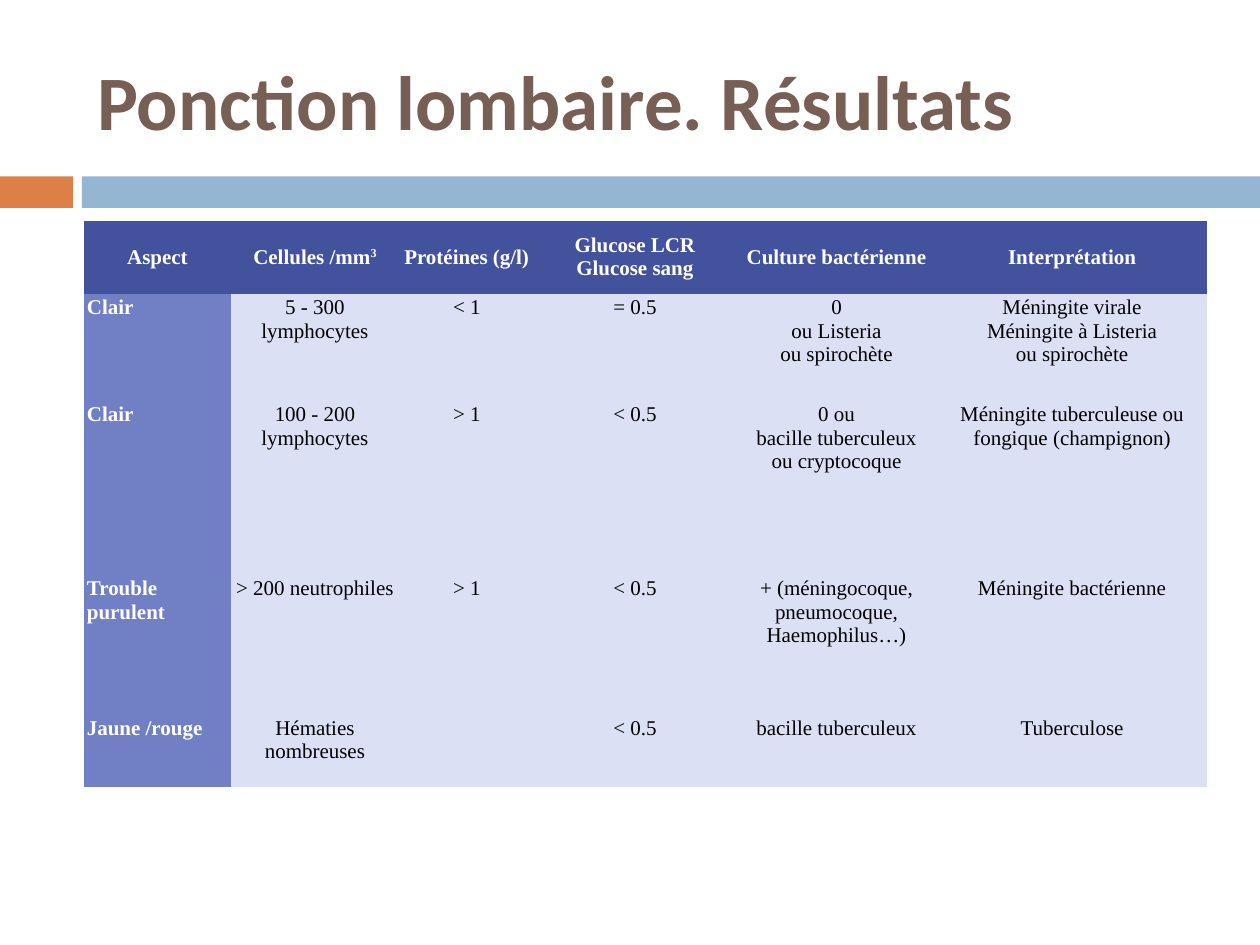
from pptx import Presentation
from pptx.dml.color import RGBColor as Rgb
from pptx.enum.shapes import MSO_SHAPE as Kind
from pptx.enum.text import MSO_ANCHOR as Anchor, PP_ALIGN as Align
from pptx.util import Inches, Pt

TITLE = "Ponction lombaire. Résultats"
HEAD = ["Aspect", "Cellules /mm^3", "Protéines (g/l)", "Glucose LCR\nGlucose sang",
        "Culture bactérienne", "Interprétation"]
ROWS = [
    ["Clair", "5 - 300 lymphocytes", "< 1", "= 0.5", "0\nou Listeria\nou spirochète",
     "Méningite virale\nMéningite à Listeria\nou spirochète"],
    ["Clair", "100 - 200 lymphocytes", "> 1", "< 0.5",
     "0 ou\nbacille tuberculeux\nou cryptocoque",
     "Méningite tuberculeuse ou fongique (champignon)"],
    ["Trouble purulent", "> 200 neutrophiles", "> 1", "< 0.5",
     "+ (méningocoque, pneumocoque, Haemophilus…)", "Méningite bactérienne"],
    ["Jaune /rouge", "Hématies nombreuses", "", "< 0.5", "bacille tuberculeux", "Tuberculose"],
]
WIDTHS = [1.16, 1.34, 1.07, 1.6, 1.6, 2.14]
HEIGHTS = [0.58, 0.85, 1.38, 1.11, 0.58]
HUES = {"orange": "DD8047", "blue": "94B6D2", "title": "775F55", "head": "42529D",
        "side": "7180C4", "body": "DBE0F5", "white": "FFFFFF", "black": "000000"}
BARS = [(0, 0.58, "orange"), (0.65, 9.35, "blue")]
LEFT, WIDE = 0.67, 8.92
PAD = 0.02
PLAIN = "{2D5ABB26-0587-4C30-8999-92F81FD0307C}"


def hue(name):
    """Return the named colour."""
    return Rgb.from_string(HUES[name])


def style(item, **values):
    """Set each given attribute on the item."""
    for key, value in values.items():
        setattr(item, key, value)


def paint(shape, name):
    """Give the shape a solid fill."""
    shape.fill.solid()
    shape.fill.fore_color.rgb = hue(name)


def ink(run, face, size, bold, name):
    """Format the font of a run."""
    style(run.font, name=face, size=Pt(size), bold=bold)
    run.font.color.rgb = hue(name)


def write(cell, text, bold, name, align):
    """Fill a cell with lines, raising what follows a caret."""
    frame = cell.text_frame
    for num, line in enumerate(text.split("\n")):
        para = frame.add_paragraph() if num else frame.paragraphs[0]
        para.alignment = align
        for part, piece in enumerate(line.split("^")):
            run = para.add_run()
            run.text = piece
            ink(run, "Times New Roman", 12, bold, name)
            if part:
                run.font._element.set("baseline", "30000")


def add_grid(slide):
    """Add the table of results."""
    data = [HEAD] + ROWS
    frame = slide.shapes.add_table(len(data), len(HEAD), Inches(LEFT), Inches(1.75),
                                   Inches(WIDE), Inches(sum(HEIGHTS)))
    table = frame.table
    table.horz_banding = False
    table._tbl.tblPr[0].text = PLAIN
    for col, size in zip(table.columns, WIDTHS):
        col.width = Inches(size)
    for row, size in zip(table.rows, HEIGHTS):
        row.height = Inches(size)
    for r, line in enumerate(data):
        for c, text in enumerate(line):
            cell = table.cell(r, c)
            top, side = r == 0, c == 0
            bold = top or side
            paint(cell, "head" if top else "side" if side else "body")
            style(cell, vertical_anchor=Anchor.MIDDLE if top else Anchor.TOP,
                  **{f"margin_{edge}": Inches(PAD)
                     for edge in ("left", "right", "top", "bottom")})
            write(cell, text, bold, "white" if bold else "black",
                  Align.LEFT if side and not top else Align.CENTER)


def main():
    """Build the slide."""
    deck = Presentation()
    style(deck, slide_width=Inches(10), slide_height=Inches(7.5))
    slide = deck.slides.add_slide(deck.slide_layouts[5])
    for left, width, name in BARS:
        bar = slide.shapes.add_shape(Kind.RECTANGLE, Inches(left), Inches(1.4),
                                     Inches(width), Inches(0.25))
        bar.shadow.inherit = False
        paint(bar, name)
        bar.line.fill.background()
    title = slide.shapes.title
    style(title, left=Inches(LEFT), top=Inches(0.25), width=Inches(WIDE), height=Inches(1.08))
    title.text_frame.text = TITLE
    title.text_frame.vertical_anchor = Anchor.MIDDLE
    para = title.text_frame.paragraphs[0]
    para.alignment = Align.LEFT
    ink(para.runs[0], "Calibri", 44, True, "title")
    add_grid(slide)
    deck.save("out.pptx")


if __name__ == "__main__":
    main()
